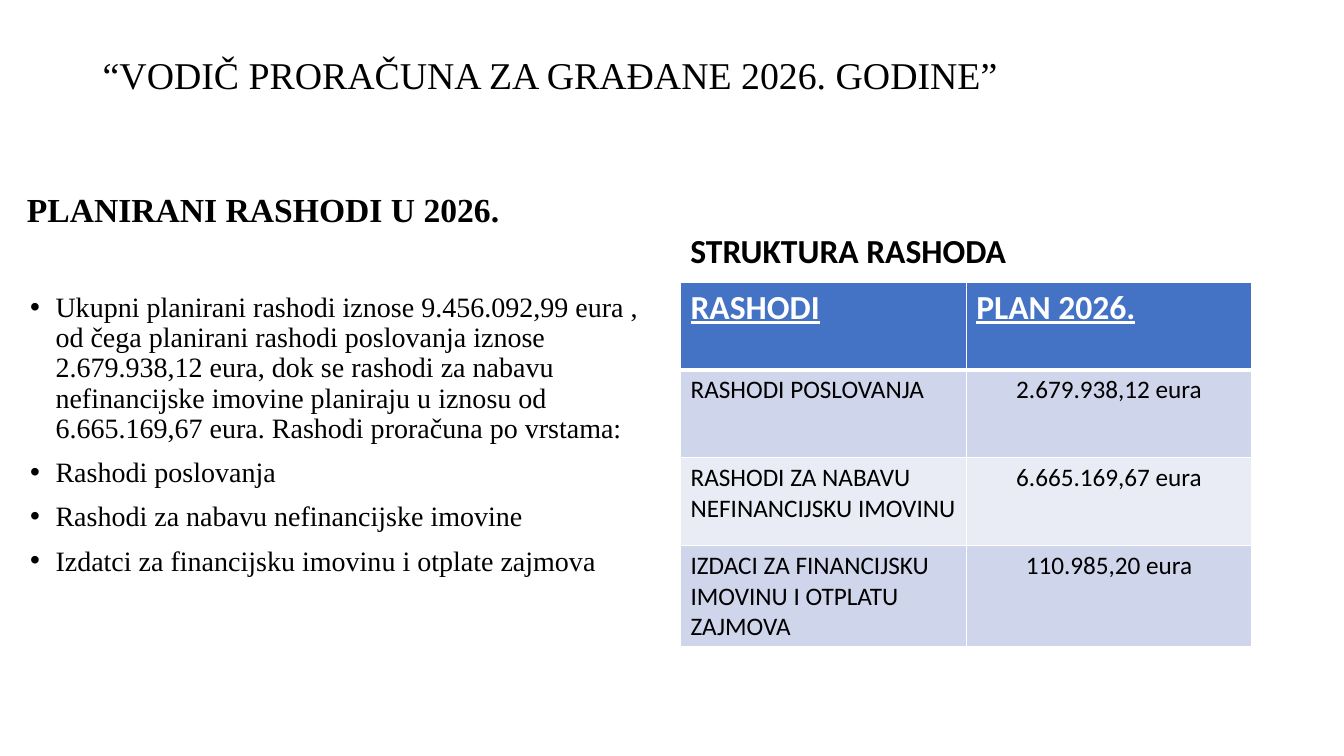
import pptx
import pptx.util
import pptx.dml.color
import pptx.enum.text
import pptx.oxml
import pptx.oxml.ns

Cm, Pt = pptx.util.Cm, pptx.util.Pt
ALIGN = pptx.enum.text.PP_ALIGN
ANCHOR = pptx.enum.text.MSO_ANCHOR
SERIF, SANS = "Times New Roman", "Calibri"
COLORS = {"text": "000000", "white": "FFFFFF", "head": "4472C4",
          "odd": "CFD5EA", "even": "E9EBF5"}

ITEMS = [
    "Ukupni planirani rashodi iznose 9.456.092,99 eura , od čega planirani "
    "rashodi poslovanja iznose 2.679.938,12 eura, dok se rashodi za nabavu "
    "nefinancijske imovine planiraju u iznosu od 6.665.169,67 eura. "
    "Rashodi proračuna po vrstama:",
    "Rashodi poslovanja",
    "Rashodi za nabavu nefinancijske imovine",
    "Izdatci za financijsku imovinu i otplate zajmova",
]
ROWS = [
    ("RASHODI", "PLAN 2026."),
    ("RASHODI POSLOVANJA", "2.679.938,12 eura"),
    ("RASHODI ZA NABAVU NEFINANCIJSKU IMOVINU", "6.665.169,67 eura"),
    ("IZDACI ZA FINANCIJSKU IMOVINU I OTPLATU ZAJMOVA", "110.985,20 eura"),
]


def rgb(name):
    return pptx.dml.color.RGBColor.from_string(COLORS[name])


def style(para, face, size, color="text", bold=False):
    font = para.font
    font.name, font.size, font.bold = face, Pt(size), bold
    font.color.rgb = rgb(color)


def add_text(slide, box, lines, face, size, bold=False,
             anchor=ANCHOR.TOP, inset=0.13):
    """Place one paragraph per line in box and return the text frame."""
    frame = slide.shapes.add_textbox(*map(Cm, box)).text_frame
    frame.word_wrap = True
    frame.vertical_anchor = anchor
    frame.margin_top = Cm(inset)
    for i, line in enumerate(lines):
        para = frame.paragraphs[0] if i == 0 else frame.add_paragraph()
        para.text = line
        para.line_spacing = 0.9
        para.space_before = Pt(10 if i else 0)
        style(para, face, size, bold=bold)
    return frame


def add_title(slide, box):
    add_text(slide, box, ["“VODIČ PRORAČUNA ZA GRAĐANE 2026. GODINE”"],
             SERIF, 27, inset=0.4)


def add_head(slide, box, text, face):
    add_text(slide, box, [text], face, 24, True, ANCHOR.BOTTOM)


def add_list(slide, box):
    frame = add_text(slide, box, ITEMS, SERIF, 20, inset=1.24)
    for para in frame.paragraphs:
        props = para._p.get_or_add_pPr()
        props.set("marL", str(Cm(0.64)))
        props.set("indent", str(-Cm(0.64)))
        for tag, key, value in (("buFont", "typeface", "Arial"),
                                ("buChar", "char", "•")):
            bullet = pptx.oxml.ns.qn(f"a:{tag}")
            node = props.makeelement(bullet, {key: value})
            props.insert_element_before(node, "a:tabLst", "a:defRPr", "a:extLst")


def add_edges(cell, top, bottom):
    """Draw white cell borders with the given top and bottom widths."""
    props = cell._tc.get_or_add_tcPr()
    for side, width in zip("LRTB", (1, 1, top, bottom)):
        props.append(pptx.oxml.parse_xml(
            f'<a:ln{side} {pptx.oxml.ns.nsdecls("a")} w="{Pt(width)}">'
            f'<a:solidFill><a:srgbClr val="{COLORS["white"]}"/></a:solidFill>'
            f'</a:ln{side}>'))


def add_grid(slide, box):
    heights = (2.21, 2.21, 2.21, 2.54)
    table = slide.shapes.add_table(len(ROWS), 2, *map(Cm, box)).table
    for col in table.columns:
        col.width = Cm(box[2] / 2)
    for r, (row, height) in enumerate(zip(ROWS, heights)):
        table.rows[r].height = Cm(height)
        head = r == 0
        fill = "head" if head else ("even", "odd")[r % 2]
        for c, text in enumerate(row):
            cell = table.cell(r, c)
            add_edges(cell, 3 if r == 1 else 1, 3 if head else 1)
            cell.fill.solid()
            cell.fill.fore_color.rgb = rgb(fill)
            cell.text = text
            para = cell.text_frame.paragraphs[0]
            style(para, SANS, 24 if head else 18,
                  "white" if head else "text", head)
            para.font.underline = head
            para.alignment = ALIGN.CENTER if c and not head else ALIGN.LEFT


def main():
    deck = pptx.Presentation()
    deck.slide_width, deck.slide_height = Cm(33.87), Cm(19.05)
    slide = deck.slides.add_slide(deck.slide_layouts[6])
    add_title(slide, (2.34, 1.02, 29.21, 3.68))
    add_head(slide, (0.43, 3.66, 16.23, 2.26), "PLANIRANI RASHODI U 2026.", SERIF)
    add_list(slide, (0.51, 6.15, 16.31, 12.37))
    add_head(slide, (17.15, 4.67, 14.4, 2.29), "STRUKTURA RASHODA", SANS)
    add_grid(slide, (17.15, 7.11, 14.4, 9.17))
    deck.save("out.pptx")


if __name__ == "__main__":
    main()
